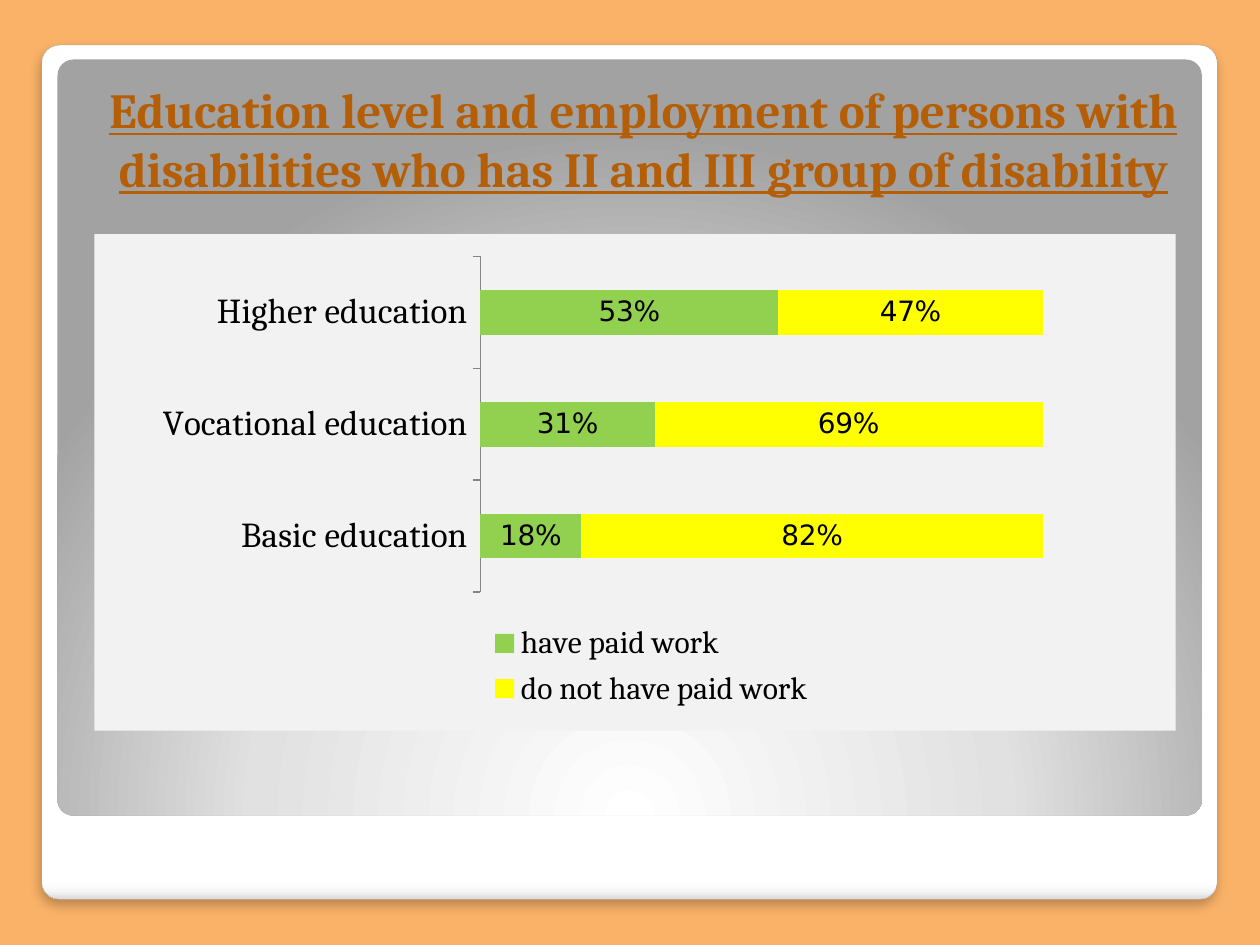
"""Build a slide with a stacked bar chart on education and paid work."""
from dataclasses import dataclass
from typing import Optional

from lxml import etree
from pptx import Presentation
from pptx import util as u
from pptx.chart.data import CategoryChartData
from pptx.dml.color import RGBColor
from pptx.enum import chart as ch, shapes, text
from pptx.oxml import parse_xml
from pptx.oxml.ns import nsdecls, qn

COLORS = {
    "background": "F9B268", "white": "FFFFFF", "card_edge": "A4A4A4",
    "title": "B45F07", "text": "000000", "chart": "F2F2F2", "axis": "868686",
    "work": "92D050", "no_work": "FFFF00",
}
HEADING_FONT = "Cambria"
LABEL_FONT = "DejaVu Sans"
CATEGORIES = ("Basic education", "Vocational education", "Higher education")


@dataclass
class Box:
    left: float
    top: float
    width: float
    height: float

    def lengths(self) -> tuple:
        return tuple(u.Cm(v) for v in (self.left, self.top, self.width, self.height))


@dataclass
class Panel:
    box: Box
    stops: tuple
    direction: str
    edge: Optional[str] = None
    shadow: bool = False


@dataclass
class Answer:
    name: str
    shares: tuple
    color: str


PANELS = (
    Panel(Box(0.84, 0.91, 23.7, 17.22),
          ((0, "FFFFFF"), (98, "FFFFFF"), (99, "F7F7F7"), (100, "DADADA")),
          '<a:lin ang="5400000" scaled="0"/>', "card_edge", True),
    Panel(Box(1.16, 1.2, 23.07, 15.24),
          ((0, "FFFFFF"), (55, "E1E1E1"), (100, "A2A2A2")),
          '<a:path path="circle"><a:fillToRect l="50000" t="175000" r="50000" b="-75000"/></a:path>'),
)
ANSWERS = (
    Answer("have paid work", (0.18, 0.31, 0.53), "work"),
    Answer("do not have paid work", (0.82, 0.69, 0.47), "no_work"),
)
TITLE_BOX = Box(1.3, 1.32, 23.34, 2.79)
CHART_BOX = Box(1.9, 4.72, 21.8, 10.01)
PLOT_AREA = Box(0.357, 0.045, 0.624, 0.676)
LEGEND_AREA = Box(0.36, 0.77, 0.31, 0.2)


def rgb(name: str) -> RGBColor:
    return RGBColor.from_string(COLORS[name])


def style_font(font, size: int, face: str, color: str = "text") -> None:
    font.size, font.name = u.Pt(size), face
    font.color.rgb = rgb(color)


def draw_panel(slide, panel: Panel) -> None:
    shape = slide.shapes.add_shape(shapes.MSO_SHAPE.ROUNDED_RECTANGLE, *panel.box.lengths())
    shape.adjustments[0] = 0.021
    shape.shadow.inherit = False
    stops = "".join(f'<a:gs pos="{position * 1000}"><a:srgbClr val="{color}"/></a:gs>'
                    for position, color in panel.stops)
    properties = shape._element.spPr
    properties.find(qn("a:prstGeom")).addnext(parse_xml(
        f'<a:gradFill {nsdecls("a")} rotWithShape="1"><a:gsLst>{stops}</a:gsLst>'
        f'{panel.direction}</a:gradFill>'))
    if panel.edge:
        shape.line.color.rgb = rgb(panel.edge)
        shape.line.width = u.Pt(0.16)
    else:
        shape.line.fill.background()
    if panel.shadow:
        properties.find(qn("a:effectLst")).append(parse_xml(
            f'<a:outerShdw {nsdecls("a")} blurRad="{u.Pt(6)}" dist="{u.Pt(4)}" dir="5400000" '
            f'rotWithShape="0"><a:srgbClr val="{COLORS["text"]}"><a:alpha val="25000"/>'
            '</a:srgbClr></a:outerShdw>'))


def write_title(slide, wording: str) -> None:
    title = slide.shapes.title
    slide.shapes._spTree.append(title._element)
    title.left, title.top, title.width, title.height = TITLE_BOX.lengths()
    frame = title.text_frame
    frame.word_wrap = True
    frame.auto_size = text.MSO_AUTO_SIZE.NONE
    frame.vertical_anchor = text.MSO_ANCHOR.BOTTOM
    paragraph = frame.paragraphs[0]
    paragraph.alignment = text.PP_ALIGN.CENTER
    run = paragraph.add_run()
    run.text = wording
    style_font(run.font, 28, HEADING_FONT, "title")
    run.font.bold = run.font.underline = True


def set_layout(parent, area: Box, index: int, inner: bool = False) -> None:
    for old in parent.findall(qn("c:layout")):
        parent.remove(old)
    layout = etree.Element(qn("c:layout"))
    manual = etree.SubElement(layout, qn("c:manualLayout"))
    settings = [("layoutTarget", "inner")] if inner else []
    settings += [("xMode", "edge"), ("yMode", "edge"), ("x", area.left), ("y", area.top),
                 ("w", area.width), ("h", area.height)]
    for tag, value in settings:
        etree.SubElement(manual, qn(f"c:{tag}")).set("val", str(value))
    parent.insert(index, layout)


def draw_chart(slide) -> None:
    data = CategoryChartData(number_format="0%")
    data.categories = CATEGORIES
    for answer in ANSWERS:
        data.add_series(answer.name, answer.shares)
    chart = slide.shapes.add_chart(
        ch.XL_CHART_TYPE.BAR_STACKED, *CHART_BOX.lengths(), data).chart
    style_font(chart.font, 10, LABEL_FONT)
    chart.has_title = False
    root = chart._chartSpace.find(qn("c:chart"))
    root.addnext(parse_xml(
        f'<c:spPr {nsdecls("c", "a")}><a:solidFill><a:srgbClr val="{COLORS["chart"]}"/>'
        '</a:solidFill><a:ln><a:noFill/></a:ln></c:spPr>'))
    set_layout(root.find(qn("c:plotArea")), PLOT_AREA, 0, inner=True)

    plot = chart.plots[0]
    plot.gap_width, plot.overlap, plot.vary_by_categories = 150, 100, False
    for series, answer in zip(plot.series, ANSWERS):
        series.format.fill.solid()
        series.format.fill.fore_color.rgb = rgb(answer.color)
        labels = series.data_labels
        labels.show_value = True
        labels.position = ch.XL_LABEL_POSITION.CENTER
        labels.number_format, labels.number_format_is_linked = "0%", False
        style_font(labels.font, 16, LABEL_FONT)

    levels = chart.category_axis
    levels.has_major_gridlines = False
    levels.major_tick_mark = ch.XL_TICK_MARK.OUTSIDE
    levels.format.line.color.rgb = rgb("axis")
    style_font(levels.tick_labels.font, 20, HEADING_FONT)
    shares = chart.value_axis
    shares.has_major_gridlines = shares.visible = False
    shares.minimum_scale, shares.maximum_scale = 0, 1.2

    chart.has_legend = True
    legend = chart.legend
    legend.position = ch.XL_LEGEND_POSITION.BOTTOM
    legend.include_in_layout = False
    style_font(legend.font, 18, HEADING_FONT)
    set_layout(legend._element, LEGEND_AREA, 1)


def main() -> None:
    deck = Presentation()
    deck.slide_width, deck.slide_height = u.Cm(25.4), u.Cm(19.05)
    slide = deck.slides.add_slide(deck.slide_layouts[5])
    slide.background.fill.solid()
    slide.background.fill.fore_color.rgb = rgb("background")
    for panel in PANELS:
        draw_panel(slide, panel)
    write_title(slide, "Education level and employment of persons with disabilities "
                       "who has II and III group of disability")
    draw_chart(slide)
    deck.save("out.pptx")


if __name__ == "__main__":
    main()
